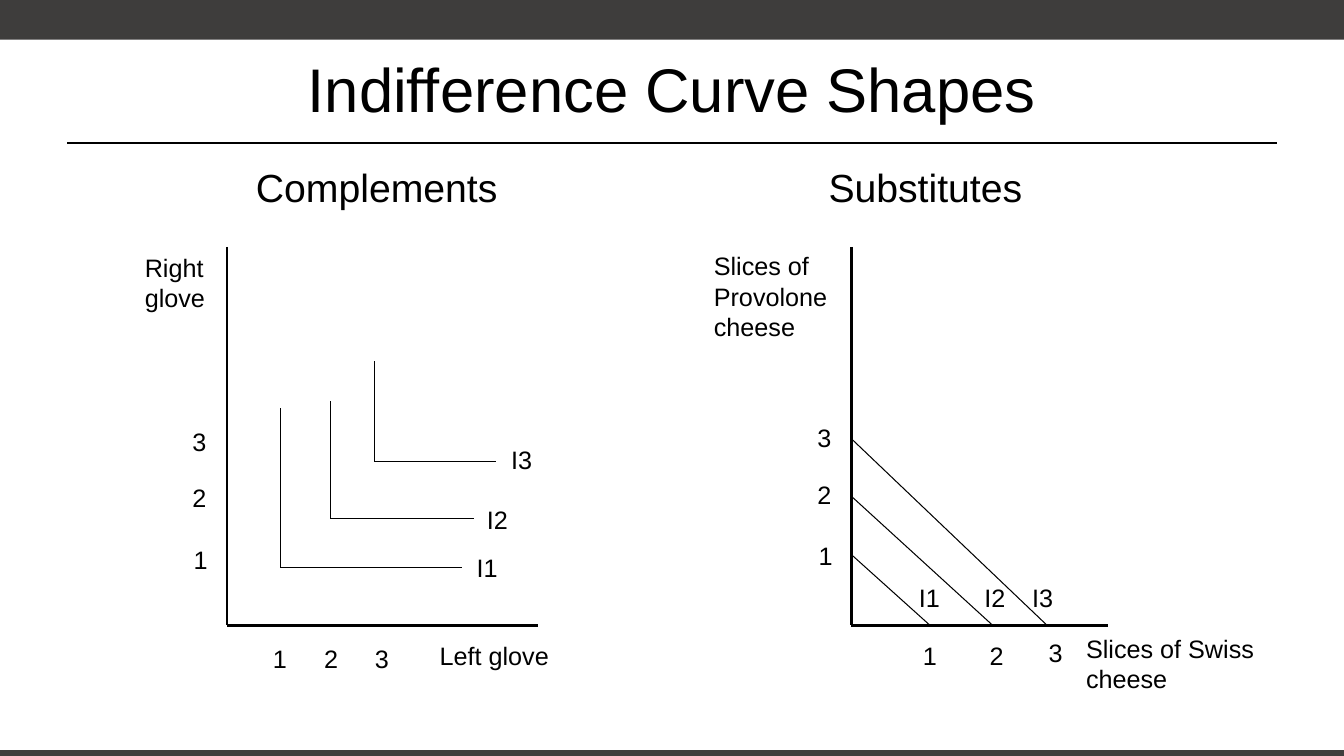
"""Build a slide that compares indifference curves of complements and substitutes."""
from lxml import etree
from pptx import Presentation
from pptx.dml.color import RGBColor
from pptx.enum.shapes import MSO_CONNECTOR, MSO_SHAPE
from pptx.enum.text import MSO_ANCHOR, PP_ALIGN
from pptx.oxml.ns import qn
from pptx.util import Cm, Pt

LINE = MSO_CONNECTOR.STRAIGHT
RECT = MSO_SHAPE.RECTANGLE
MIDDLE = MSO_ANCHOR.MIDDLE
CENTER = PP_ALIGN.CENTER
LEFT = PP_ALIGN.LEFT
COLORS = {"ink": "000000", "bar": "3E3D3C"}
FONT = "Arial"

deck = Presentation()
deck.slide_width, deck.slide_height = Cm(33.87), Cm(19.05)
slide = deck.slides.add_slide(deck.slide_layouts[5])
shapes = slide.shapes


def write(text, x, y, w=0.86, h=1.02, size=18, wrap=False, align=LEFT, box=None):
    box = box or shapes.add_textbox(0, 0, 0, 0)
    box.left, box.top, box.width, box.height = Cm(x), Cm(y), Cm(w), Cm(h)
    frame = box.text_frame
    frame.word_wrap = wrap
    frame.text = text
    for para in frame.paragraphs:
        para.alignment = align
        para.font.name, para.font.size = FONT, Pt(size)
        para.font.color.rgb = RGBColor.from_string(COLORS["ink"])


def draw(x1, y1, x2, y2, width=0.75):
    line = shapes.add_connector(LINE, Cm(x1), Cm(y1), Cm(x2), Cm(y2))
    line.line.width = Pt(width)
    line.line.color.rgb = RGBColor.from_string(COLORS["ink"])
    etree.SubElement(line._element.spPr, qn("a:effectLst"))


for top, height in ((0, 1), (18.9, 0.15)):
    bar = shapes.add_shape(RECT, 0, Cm(top), deck.slide_width, Cm(height))
    bar.shadow.inherit = False
    bar.fill.solid()
    bar.fill.fore_color.rgb = RGBColor.from_string(COLORS["bar"])
    bar.line.fill.background()

draw(1.7, 3.6, 32.18, 3.6, width=1.25)
write("Indifference Curve Shapes", 1.7, 0.62, 30.48, 3.18, size=44,
      wrap=True, align=CENTER, box=shapes.title)
shapes.title.text_frame.vertical_anchor = MIDDLE

write("Complements", 6.2, 3.99, 7, 1.45, size=28)
write("Substitutes", 20.63, 3.99, 5.46, 1.45, size=28)

base = 15.76
for left, right in ((5.72, 13.56), (21.45, 27.91)):
    draw(left, 6.22, left, base, width=2)
    draw(left, base, right, base, width=2)

write("Right\nglove", 3.4, 6.23, 2.21, 1.8, wrap=True)
write("Left glove", 10.83, 16, 3.94, wrap=True)
write("Slices of Provolone\ncheese", 17.74, 6.19, 3.63, 2.9, wrap=True)
write("Slices of Swiss\ncheese", 27.12, 15.84, 4.75, 1.7)

bends = [
    (7.06, 14.3, 10.29, 11.65, 11.76, 13.79),
    (8.33, 13.07, 10.11, 11.94, 12.02, 12.59),
    (9.43, 11.63, 9.09, 12.5, 12.63, 11.07),
]
for rank, (x, y, top, end, tag_x, tag_y) in enumerate(bends, 1):
    draw(x, y, x, top)
    draw(x, y, end, y)
    write(f"I{rank}", tag_x, tag_y, 1.1)

slopes = [(13.97, 23.44, 22.91), (12.5, 25.02, 24.56), (11.05, 26.39, 25.76)]
for rank, (y, x, tag_x) in enumerate(slopes, 1):
    draw(21.45, y, x, base)
    write(f"I{rank}", tag_x, 14.55, 1.1, 0.89)

ticks = [
    [(4.63, 13.59), (4.6, 12.02), (4.6, 10.62)],
    [(6.63, 16.08), (7.92, 16.08), (9.2, 16.08)],
    [(20.38, 13.49), (20.35, 11.95), (20.35, 10.52)],
    [(23.01, 16), (24.69, 16), (26.18, 15.93)],
]
for axis in ticks:
    for count, (x, y) in enumerate(axis, 1):
        write(str(count), x, y)

deck.save("out.pptx")
